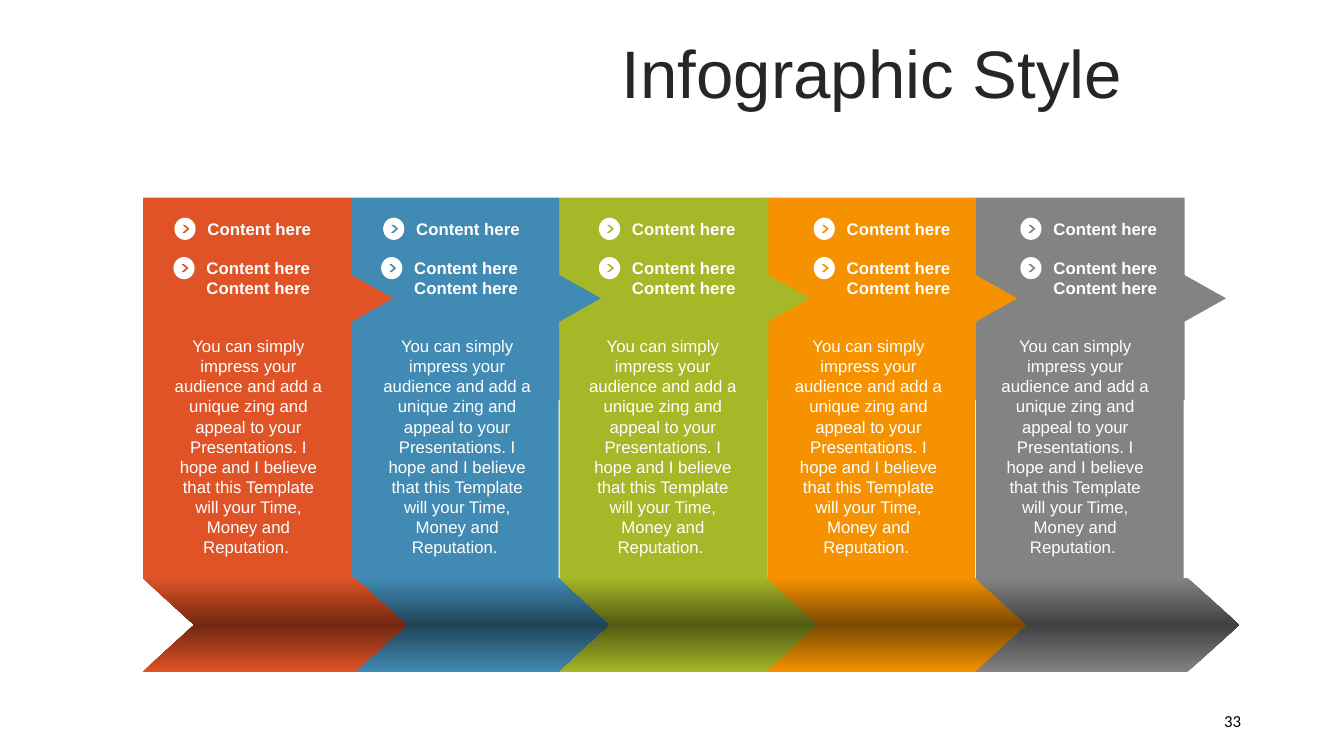
from collections import namedtuple

from lxml.etree import SubElement
from pptx import Presentation
from pptx.dml.color import RGBColor
from pptx.enum.shapes import MSO_SHAPE
from pptx.enum.text import MSO_ANCHOR, MSO_AUTO_SIZE, PP_ALIGN
from pptx.oxml.ns import qn
from pptx.util import Pt

PX = 9144  # EMU per px, 100 px to the inch

WHITE = RGBColor(0xFF, 0xFF, 0xFF)
BLACK = RGBColor(0x00, 0x00, 0x00)
CHARCOAL = RGBColor(0x26, 0x26, 0x26)
RED = RGBColor(0xDF, 0x53, 0x27)
DARK_RED = RGBColor(0x72, 0x28, 0x10)
BLUE = RGBColor(0x41, 0x8A, 0xB3)
DARK_BLUE = RGBColor(0x20, 0x45, 0x59)
GREEN = RGBColor(0xA6, 0xB7, 0x27)
DARK_GREEN = RGBColor(0x52, 0x5B, 0x13)
ORANGE = RGBColor(0xF6, 0x92, 0x00)
DARK_ORANGE = RGBColor(0x7B, 0x49, 0x00)
GREY = RGBColor(0x83, 0x83, 0x83)
DARK_GREY = RGBColor(0x41, 0x41, 0x41)

# Left edges of the two bullets and of the body text differ from step to step
Step = namedtuple("Step", "left color dark upper_left lower_left body_left")
COLUMNS = [
    (RED, DARK_RED, 173, 172, 161),
    (BLUE, DARK_BLUE, 380, 378, 368),
    (GREEN, DARK_GREEN, 594, 594, 572),
    (ORANGE, DARK_ORANGE, 807, 807, 776),
    (GREY, DARK_GREY, 1012, 1012, 981),
]
STEPS = [Step(142 + 413 * i // 2, *column) for i, column in enumerate(COLUMNS)]

BULLET = "Content here"
BODY = (
    "You can simply impress your audience and add a unique zing and appeal to "
    "your Presentations. I hope and I believe that this Template will your "
    "Time, Money and Reputation. "
)


def box(*lengths):
    return [length * PX for length in lengths]


def paint(shape, color):
    shape.shadow.inherit = False
    shape.fill.solid()
    shape.fill.fore_color.rgb = color
    shape.line.fill.background()


def add_text(shapes, place, text, color=WHITE, size=12, font="Arial", bold=False,
             align=PP_ALIGN.LEFT, anchor=MSO_ANCHOR.MIDDLE, grow=True, spacing=None):
    frame = shapes.add_textbox(*box(*place)).text_frame
    frame.word_wrap = True
    frame.vertical_anchor = anchor
    frame.auto_size = MSO_AUTO_SIZE.SHAPE_TO_FIT_TEXT if grow else MSO_AUTO_SIZE.NONE
    frame.text = text
    for paragraph in frame.paragraphs:
        paragraph.alignment = align
        paragraph.line_spacing = spacing
        for run in paragraph.runs:
            run.font.name = font
            run.font.size = Pt(size)
            run.font.bold = bold
            run.font.color.rgb = color


def add_panel(shapes, step):
    left, right = step.left, step.left + 207
    builder = shapes.build_freeform(left, 196, scale=PX)
    builder.add_line_segments([
        (right, 196), (right, 273), (right + 41, 296), (right, 319), (right, 397),
        (right - 1, 397), (right - 1, 574), (left, 574),
    ])
    paint(builder.convert_to_shape(), step.color)


def add_ribbon(shapes, step):
    ribbon = shapes.add_shape(MSO_SHAPE.CHEVRON, *box(step.left - 1, 573, 262, 94))
    ribbon.adjustments[0] = 0.55
    ribbon.shadow.inherit = False
    ribbon.line.fill.background()
    ribbon.fill.gradient()
    ribbon.fill.gradient_angle = 270
    # Three stops: light edges around a dark fold
    stops = ribbon.fill._xPr.find(qn("a:gradFill")).find(qn("a:gsLst"))
    for stop in list(stops):
        stops.remove(stop)
    for percent, color in ((0, step.color), (50, step.dark), (100, step.color)):
        stop = SubElement(stops, qn("a:gs"), pos=str(percent * 1000))
        SubElement(stop, qn("a:srgbClr"), val=str(color))


def add_bullet(shapes, left, top, color, text, height):
    bullet = shapes.add_group_shape().shapes
    disc = bullet.add_shape(MSO_SHAPE.OVAL, *box(left, top, 21, 22))
    paint(disc, WHITE)
    arrow = bullet.add_shape(MSO_SHAPE.CHEVRON, *box(left + 8, top + 7, 7, 8))
    arrow.adjustments[0] = 0.65
    paint(arrow, color)
    add_text(bullet, (left + 23, top - 4, 127, height), text, bold=True)


def main():
    prs = Presentation()
    prs.slide_width, prs.slide_height = box(1333, 750)
    shapes = prs.slides.add_slide(prs.slide_layouts[6]).shapes

    # Title
    add_text(shapes, (429, 37, 872, 79), "Infographic Style", CHARCOAL, 48,
             align=PP_ALIGN.CENTER, grow=False, spacing=0.9)

    # Panels, each pointing over the one to its right
    for step in reversed(STEPS):
        add_panel(shapes, step)

    # Folded ribbon, with the first step on top
    for step in STEPS[1:] + STEPS[:1]:
        add_ribbon(shapes, step)

    # Bullets and body text
    for step in STEPS:
        add_bullet(shapes, step.upper_left, 216, step.color, BULLET, 30)
        add_bullet(shapes, step.lower_left, 255, step.color, f"{BULLET}\n{BULLET}", 50)
        add_text(shapes, (step.body_left, 328, 171, 232), BODY,
                 align=PP_ALIGN.CENTER, anchor=MSO_ANCHOR.TOP)

    # Slide number
    add_text(shapes, (675, 695, 566, 40), "33", BLACK, font="Calibri",
             align=PP_ALIGN.RIGHT, grow=False)

    prs.save("out.pptx")


if __name__ == "__main__":
    main()
